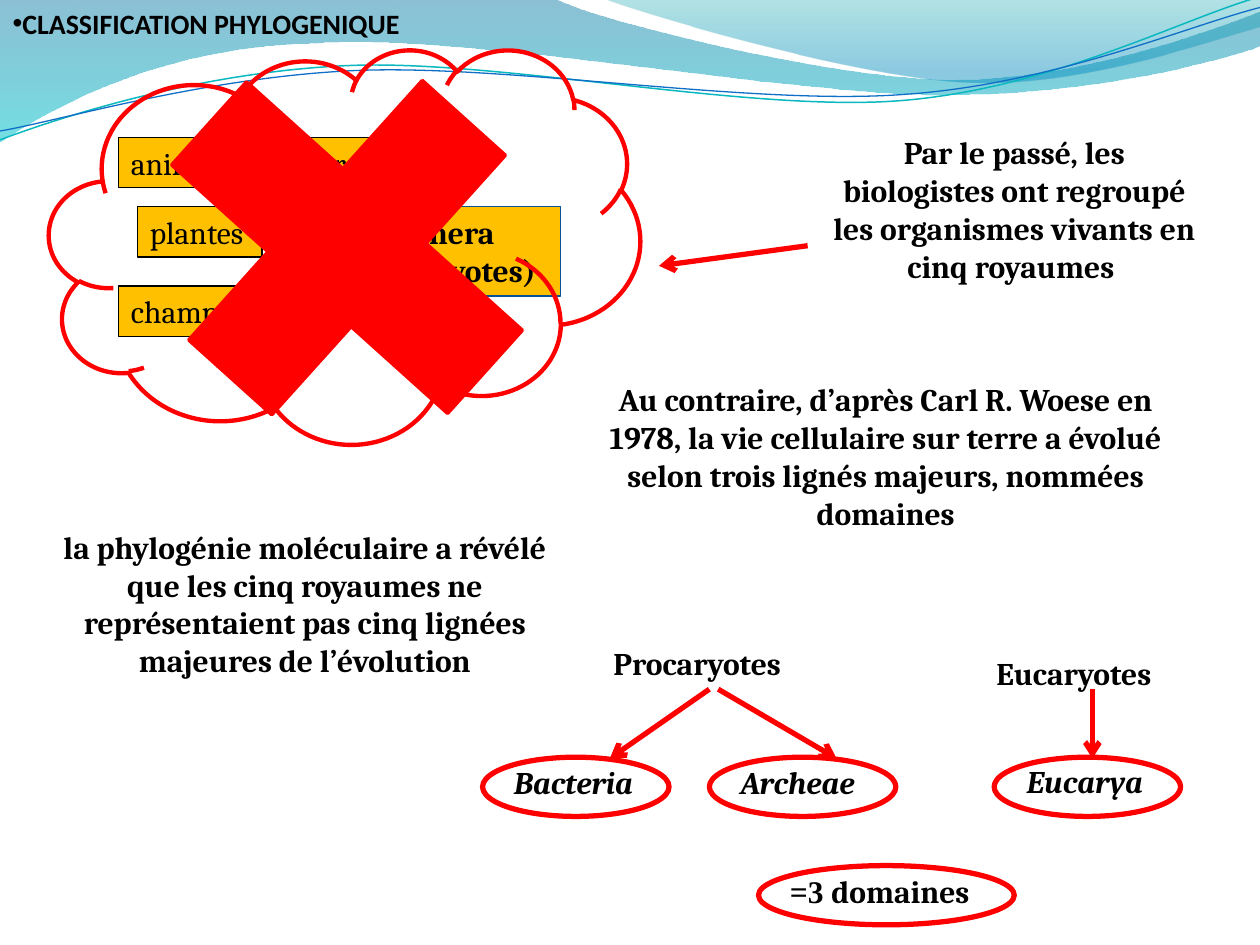
"""Build the slide on phylogenetic classification, from five kingdoms to three domains."""
from dataclasses import dataclass
from math import cos, radians, sin

from lxml.etree import SubElement
from pptx import Presentation
from pptx.dml.color import RGBColor
from pptx.enum.shapes import MSO_CONNECTOR, MSO_SHAPE
from pptx.enum.text import MSO_ANCHOR, MSO_AUTO_SIZE, PP_ALIGN
from pptx.oxml.ns import qn
from pptx.util import Inches, Pt

COLORS = {
    "red": "FF0000", "amber": "FFC000", "black": "000000", "navy": "095295",
    "ocean": "0074A1", "cyan": "00C6CF", "teal": "00A1A9", "blue": "008BBF",
    "teal line": "0AB8BF", "blue line": "0F6FC6",
}


@dataclass
class Wave:
    start: tuple
    segments: list
    stops: tuple = ()
    line: str = ""
    width: float = 0
    tilt: float = 0
    center: tuple = (0, 0)


@dataclass
class Label:
    text: str
    left: float
    top: float
    width: float
    height: float = 0.4
    bold: bool = True
    italic: bool = False
    centered: bool = False
    wrap: bool = True
    font: str = "Cambria"
    line: str = "black"


WAVES = [
    Wave((0, 0),
         [(4.4, -0.01), (4.76, 0.17, 6.64, 0.63, 7.58, 0.63),
          (8.53, 0.63, 9.58, 0.26, 10, 0.09), (10.01, 0.36),
          (9.83, 0.44, 8.7, 0.76, 7.46, 0.75), (6.22, 0.75, 3.82, 0.28, 2.57, 0.34),
          (1.29, 0.36, 0.46, 0.83, -0.01, 1.13), (0, 0)],
         stops=(("ocean", 0, 45), ("cyan", 1, 55))),
    Wave((4.79, -0.01),
         [(5.09, 0.11, 6.82, 0.62, 7.69, 0.65), (8.56, 0.69, 9.61, 0.32, 10, 0.21),
          (10, 0), (4.79, -0.01)],
         stops=(("teal", 0, 30), ("blue", 0.8, 45))),
    Wave((0, 1.11),
         [(0.48, 0.93, 1.58, 0.57, 2.77, 0.52), (3.95, 0.47, 5.93, 0.89, 7.13, 0.8),
          (8.33, 0.71, 9.38, 0.15, 9.98, -0.02)],
         line="teal line", width=0.85, tilt=2.7, center=(4.99, 0.57)),
    Wave((0, 1.04),
         [(0.47, 0.96, 1.64, 0.61, 2.83, 0.56), (4.03, 0.51, 5.97, 0.84, 7.17, 0.75),
          (8.36, 0.67, 9.41, 0.21, 10, 0.06)],
         line="blue line", width=0.75, tilt=2.7, center=(5, 0.59)),
]
KINGDOMS = [
    Label("monera \n(procaryotes) ", 2.58, 1.64, 1.87, 0.71, centered=True, line="navy"),
    Label("plantes", 1.09, 1.64, 0.99, bold=False, wrap=False),
    Label("animaux,", 0.94, 1.09, 1.21, bold=False, wrap=False),
    Label("champignon", 0.94, 2.27, 1.58, bold=False, wrap=False),
    Label("protistes", 2.42, 1.09, 1.2, bold=False, wrap=False),
]
TEXTS = [
    Label("Par le passé, les biologistes ont regroupé les organismes vivants en "
          "cinq royaumes ", 6.49, 1.01, 3.12, 1.31, centered=True),
    Label("la phylogénie moléculaire a révélé que les cinq royaumes ne représentaient "
          "pas cinq lignées majeures de l’évolution", 0.23, 4.14, 4.38, 1.31, centered=True),
    Label("Au contraire, d’après Carl R. Woese en 1978, la vie cellulaire sur terre a "
          "évolué selon trois lignés majeurs, nommées domaines",
          4.53, 2.97, 5, 1.31, centered=True),
    Label("Procaryotes", 4.77, 5.06, 1.72),
    Label("Eucaryotes", 7.81, 5.14, 1.72),
    Label("Bacteria", 3.98, 6.01, 1.72, italic=True),
    Label("Archeae", 5.78, 6.01, 1.72, italic=True),
    Label("Eucarya", 8.05, 6, 1.72, italic=True),
]
ARROWS = [
    (6.41, 1.95, 5.23, 2.11), (5.63, 5.47, 4.84, 6.02),
    (5.7, 5.47, 6.64, 6.02), (8.67, 5.47, 8.67, 6.02),
]
OVALS = [(3.83, 6.01, 1.48), (5.63, 6.01, 1.48), (7.89, 6.01, 1.48), (6.02, 6.87, 2.03)]


def color(name: str) -> RGBColor:
    return RGBColor.from_string(COLORS[name])


def level(point: tuple, wave: Wave) -> tuple:
    """Turn a point about the wave's center, undoing its tilt."""
    angle = radians(wave.tilt)
    dx, dy = point[0] - wave.center[0], point[1] - wave.center[1]
    return (Inches(wave.center[0] + dx * cos(angle) - dy * sin(angle)),
            Inches(wave.center[1] + dx * sin(angle) + dy * cos(angle)))


def bend_lines(shape, segments: list) -> None:
    """Merge each three straight steps of a curved segment into one Bézier."""
    steps = iter(list(shape._element.spPr.iter(qn("a:lnTo"))))
    for segment in segments:
        step = next(steps)
        if len(segment) == 6:
            step.tag = qn("a:cubicBezTo")
            for extra in (next(steps), next(steps)):
                step.append(extra[0])
                extra.getparent().remove(extra)


def draw_wave(slide, wave: Wave) -> None:
    points = [segment[index:index + 2] for segment in wave.segments
              for index in range(0, len(segment), 2)]
    builder = slide.shapes.build_freeform(*level(wave.start, wave))
    builder.add_line_segments([level(point, wave) for point in points], close=bool(wave.stops))
    shape = builder.convert_to_shape()
    bend_lines(shape, wave.segments)
    shape.rotation = -wave.tilt
    shape.shadow.inherit = False
    if not wave.stops:
        shape.fill.background()
        set_line(shape, wave.line, wave.width)
        return
    shape.line.fill.background()
    shape.fill.gradient()
    shape.fill.gradient_angle = 270
    for stop, (name, position, _) in zip(shape.fill.gradient_stops, wave.stops):
        stop.color.rgb = color(name)
        stop.position = position
    fills = list(shape._element.spPr.iter(qn("a:srgbClr")))
    for fill, (_, _, opacity) in zip(fills, wave.stops):
        SubElement(fill, qn("a:alpha"), val=str(opacity * 1000))


def set_line(shape, name: str, width: float) -> None:
    shape.line.color.rgb = color(name)
    shape.line.width = Pt(width)


def add_run(paragraph, text: str, label: Label, font: str, size: float = 18) -> None:
    run = paragraph.add_run()
    run.text = text
    run.font.name = font
    run.font.size = Pt(size)
    run.font.bold = label.bold
    run.font.italic = label.italic
    run.font.color.rgb = color("black")


def write_label(shape, label: Label) -> None:
    frame = shape.text_frame
    frame.word_wrap = label.wrap
    frame.auto_size = MSO_AUTO_SIZE.SHAPE_TO_FIT_TEXT
    frame.vertical_anchor = MSO_ANCHOR.TOP
    for index, text in enumerate(label.text.split("\n")):
        paragraph = frame.add_paragraph() if index else frame.paragraphs[0]
        paragraph.alignment = PP_ALIGN.CENTER if label.centered else PP_ALIGN.LEFT
        add_run(paragraph, text, label, label.font)


def add_text(slide, label: Label):
    box = slide.shapes.add_textbox(*map(Inches, (label.left, label.top, label.width, label.height)))
    write_label(box, label)
    return box


def add_outline(slide, kind: MSO_SHAPE, box: tuple, line: str, width: float, fill: str = ""):
    shape = slide.shapes.add_shape(kind, *map(Inches, box))
    shape.shadow.inherit = False
    set_line(shape, line, width)
    if fill:
        shape.fill.solid()
        shape.fill.fore_color.rgb = color(fill)
    else:
        shape.fill.background()
    return shape


def add_arrow(slide, ends: tuple) -> None:
    arrow = slide.shapes.add_connector(MSO_CONNECTOR.STRAIGHT, *map(Inches, ends))
    set_line(arrow, "red", 3)
    SubElement(arrow.line._get_or_add_ln(), qn("a:tailEnd"), type="arrow")
    SubElement(arrow._element.spPr, qn("a:effectLst"))


def format_title(slide) -> None:
    title = slide.shapes.title
    title.left, title.top, title.width, title.height = map(Inches, (0, 0, 7.73, 0.37))
    title.text_frame.auto_size = MSO_AUTO_SIZE.SHAPE_TO_FIT_TEXT
    title.text_frame.vertical_anchor = MSO_ANCHOR.MIDDLE
    paragraph = title.text_frame.paragraphs[0]
    paragraph.alignment = PP_ALIGN.LEFT
    properties = paragraph._p.get_or_add_pPr()
    properties.set("marL", "0")
    properties.set("indent", "0")
    SubElement(properties, qn("a:buFont"), typeface="Arial")
    SubElement(properties, qn("a:buChar"), char="•")
    add_run(paragraph, "CLASSIFICATION PHYLOGENIQUE", Label("", 0, 0, 0), "Calibri", 16)
    slide.shapes._spTree.append(title._element)


def main() -> None:
    presentation = Presentation()
    presentation.slide_width, presentation.slide_height = Inches(10), Inches(7.5)
    slide = presentation.slides.add_slide(presentation.slide_layouts[5])
    for wave in WAVES:
        draw_wave(slide, wave)
    for label in KINGDOMS:
        box = (label.left, label.top, label.width, label.height)
        write_label(add_outline(slide, MSO_SHAPE.RECTANGLE, box, label.line, 0.75, "amber"), label)
    add_outline(slide, MSO_SHAPE.CLOUD, (0.39, 0.39, 4.69, 3.13), "red", 2.5)
    cross = add_outline(slide, MSO_SHAPE.MATH_PLUS, (0.87, -0.04, 3.77, 4.01), "red", 2, "red")
    cross.rotation = 312
    for label in TEXTS:
        add_text(slide, label)
    total = Label("=3 ", 6.17, 6.87, 1.71, wrap=False, font="Times New Roman")
    add_run(add_text(slide, total).text_frame.paragraphs[0], "domaines", total, "Cambria")
    for ends in ARROWS:
        add_arrow(slide, ends)
    for left, top, width in OVALS:
        add_outline(slide, MSO_SHAPE.OVAL, (left, top, width, 0.47), "red", 3)
    format_title(slide)
    presentation.save("out.pptx")


if __name__ == "__main__":
    main()
